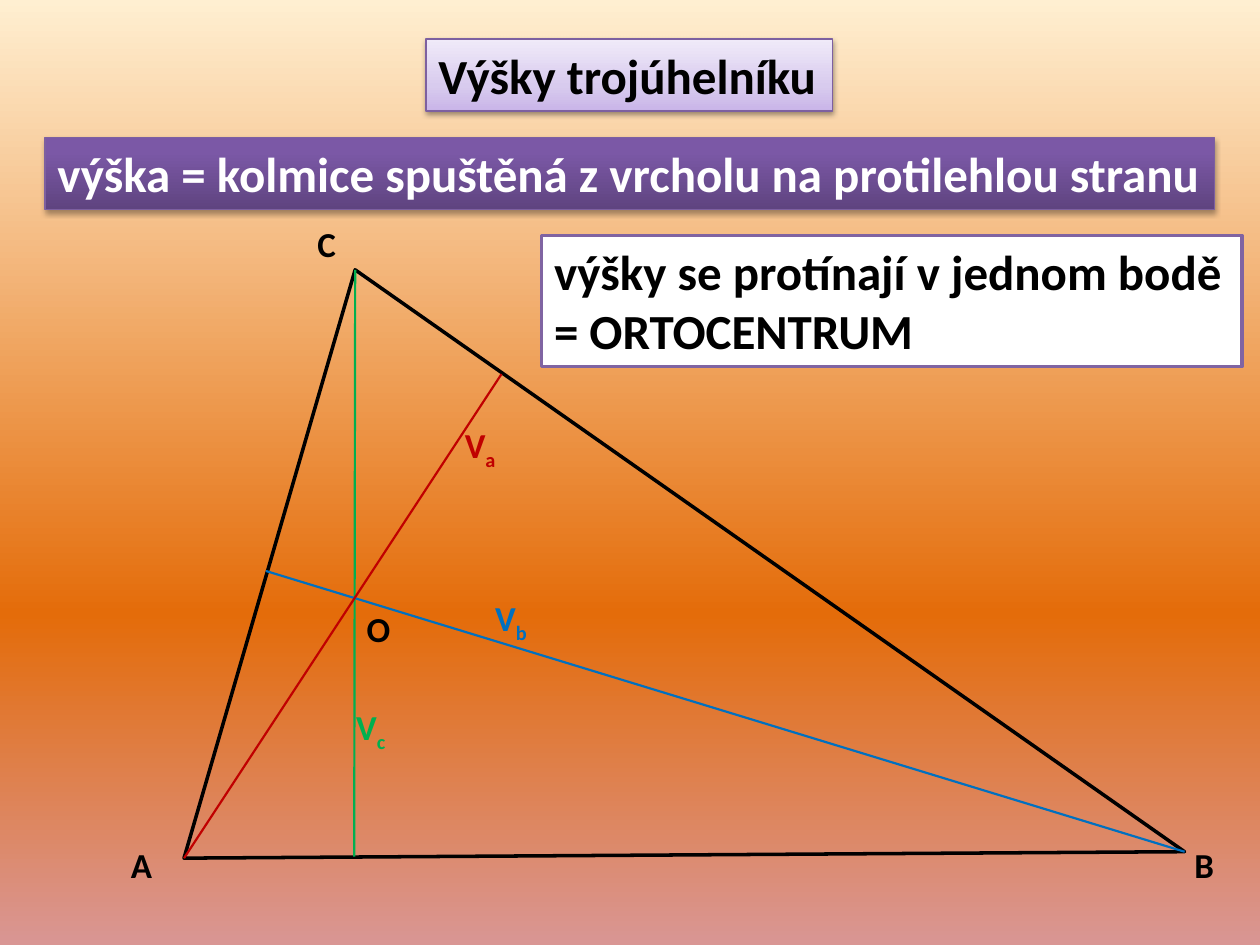
from lxml import etree
from pptx import Presentation
from pptx.dml.color import RGBColor
from pptx.enum.shapes import MSO_CONNECTOR, MSO_SHAPE
from pptx.enum.text import MSO_ANCHOR, MSO_AUTO_SIZE, PP_ALIGN
from pptx.oxml.ns import qn
from pptx.util import Cm, Pt

RECT = MSO_SHAPE.RECTANGLE
STRAIGHT = MSO_CONNECTOR.STRAIGHT
FIT = MSO_AUTO_SIZE.SHAPE_TO_FIT_TEXT
TOP = MSO_ANCHOR.TOP
LEFT = PP_ALIGN.LEFT

BLACK = RGBColor(0x00, 0x00, 0x00)
WHITE = RGBColor(0xFF, 0xFF, 0xFF)
RED = RGBColor(0xC0, 0x00, 0x00)
BLUE = RGBColor(0x00, 0x70, 0xC0)
GREEN = RGBColor(0x00, 0xB0, 0x50)
PURPLE = RGBColor(0x7D, 0x60, 0xA0)
VIOLET = RGBColor(0x80, 0x64, 0xA2)
SKY = [(0, RGBColor(0xFF, 0xEF, 0xD1)), (65, RGBColor(0xE4, 0x6C, 0x0A)),
       (100, RGBColor(0xD9, 0x96, 0x94))]
LILAC = [(0, RGBColor(0xC9, 0xB5, 0xE8)), (35, RGBColor(0xD8, 0xCB, 0xEE)),
         (100, RGBColor(0xF0, 0xEA, 0xF9))]
PLUM = [(0, RGBColor(0x5F, 0x44, 0x80)), (80, RGBColor(0x7B, 0x58, 0xA6)),
        (100, RGBColor(0x7C, 0x57, 0xA8))]

# Content; all places in cm
A, B, C = (3.71, 17.3), (23.88, 17.17), (7.16, 5.44)
ALTITUDES = [  # vertex, foot, colour
    (C, (7.14, 17.27), GREEN),
    (B, (5.36, 11.51), BLUE),
    (A, (10.11, 7.54), RED),
]
LABEL_HEIGHT = 1.12
LABELS = [  # letter, subscript, left, top, width, colour
    ("A", "", 2.39, 16.87, 0.94, BLACK),
    ("B", "", 23.83, 16.87, 0.91, BLACK),
    ("C", "", 6.15, 4.37, 0.89, BLACK),
    ("V", "a", 9.12, 8.41, 1.14, RED),
    ("V", "b", 9.73, 11.91, 1.19, BLUE),
    ("V", "c", 6.93, 14.1, 1.09, GREEN),
    ("O", "", 7.14, 12.12, 0.99, BLACK),
]
BANNERS = [  # text, place, gradient, text colour, shadow opacity %, distance pt
    ("Výšky trojúhelníku", (8.59, 0.79, 8.2, 1.45), LILAC, BLACK, 38, 1.6),
    ("výška = kolmice spuštěná z vrcholu na protilehlou stranu",
     (0.91, 2.77, 23.57, 1.45), PLUM, WHITE, 35, 1.8),
]
ORTHOCENTRE = ["výšky se protínají v jednom bodě", "= ORTOCENTRUM"]
ORTHOCENTRE_PLACE = (10.92, 4.75, 14.12, 2.64)


def set_gradient(fill, element, stops, angle):
    fill.gradient()
    grad = element.find(".//" + qn("a:gradFill"))
    stop_list = grad.find(qn("a:gsLst"))
    for old in list(stop_list):
        stop_list.remove(old)
    for position, color in stops:
        gs = etree.SubElement(stop_list, qn("a:gs"), pos=str(position * 1000))
        etree.SubElement(gs, qn("a:srgbClr"), val=str(color))
    grad.find(qn("a:lin")).set("ang", str(angle * 60000))


def add_shadow(sp, opacity, distance):
    effects = sp.element.spPr.find(qn("a:effectLst"))
    shadow = etree.SubElement(effects, qn("a:outerShdw"), blurRad=str(Pt(3.1)),
                              dist=str(Pt(distance)), dir="5400000", rotWithShape="0")
    color = etree.SubElement(shadow, qn("a:srgbClr"), val=str(BLACK))
    etree.SubElement(color, qn("a:alpha"), val=str(opacity * 1000))


def add_run(p, text, size, color):
    r = p.add_run()
    r.text = text
    r.font.name, r.font.size, r.font.bold = "Calibri", Pt(size), True
    r.font.color.rgb = color
    return r


def add_box(s, place, lines, color, border, width):
    sp = s.shapes.add_shape(RECT, *map(Cm, place))
    sp.shadow.inherit = False
    sp.line.color.rgb, sp.line.width = border, Pt(width)
    tf = sp.text_frame
    tf.word_wrap, tf.auto_size, tf.vertical_anchor = False, FIT, TOP
    for i, line in enumerate(lines):
        p = tf.add_paragraph() if i else tf.paragraphs[0]
        p.alignment = LEFT
        add_run(p, line, 28, color)
    return sp


def main():
    prs = Presentation()
    prs.slide_width, prs.slide_height = Cm(25.4), Cm(19.05)
    s = prs.slides.add_slide(prs.slide_layouts[6])
    set_gradient(s.background.fill, s.element, SKY, 90)

    # Title and definition
    for text, place, stops, color, opacity, distance in BANNERS:
        sp = add_box(s, place, [text], color, PURPLE, 0.75)
        set_gradient(sp.fill, sp.element, stops, 270)
        add_shadow(sp, opacity, distance)

    # Triangle
    corners = [tuple(map(Cm, point)) for point in (C, A, B)]
    builder = s.shapes.build_freeform(*corners[0])
    builder.add_line_segments(corners[1:], close=True)
    triangle = builder.convert_to_shape()
    triangle.shadow.inherit = False
    triangle.fill.background()
    triangle.line.color.rgb, triangle.line.width = BLACK, Pt(2)

    # Altitudes
    for vertex, foot, color in ALTITUDES:
        line = s.shapes.add_connector(STRAIGHT, *map(Cm, vertex + foot))
        line.line.color.rgb, line.line.width = color, Pt(1.25)
        etree.SubElement(line.element.spPr, qn("a:effectLst"))

    # Point and altitude labels
    for letter, subscript, left, top, width, color in LABELS:
        box = s.shapes.add_textbox(Cm(left), Cm(top), Cm(width), Cm(LABEL_HEIGHT))
        tf = box.text_frame
        tf.word_wrap, tf.auto_size = False, FIT
        p = tf.paragraphs[0]
        add_run(p, letter, 20, color)
        if subscript:
            r = add_run(p, subscript, 20, color)
            r.font.element.set("baseline", "-25000") if hasattr(r.font, "element") \
                else r.font._element.set("baseline", "-25000")

    # Orthocentre statement
    sp = add_box(s, ORTHOCENTRE_PLACE, ORTHOCENTRE, BLACK, VIOLET, 2)
    sp.fill.solid()
    sp.fill.fore_color.rgb = WHITE

    prs.save("out.pptx")


if __name__ == "__main__":
    main()
